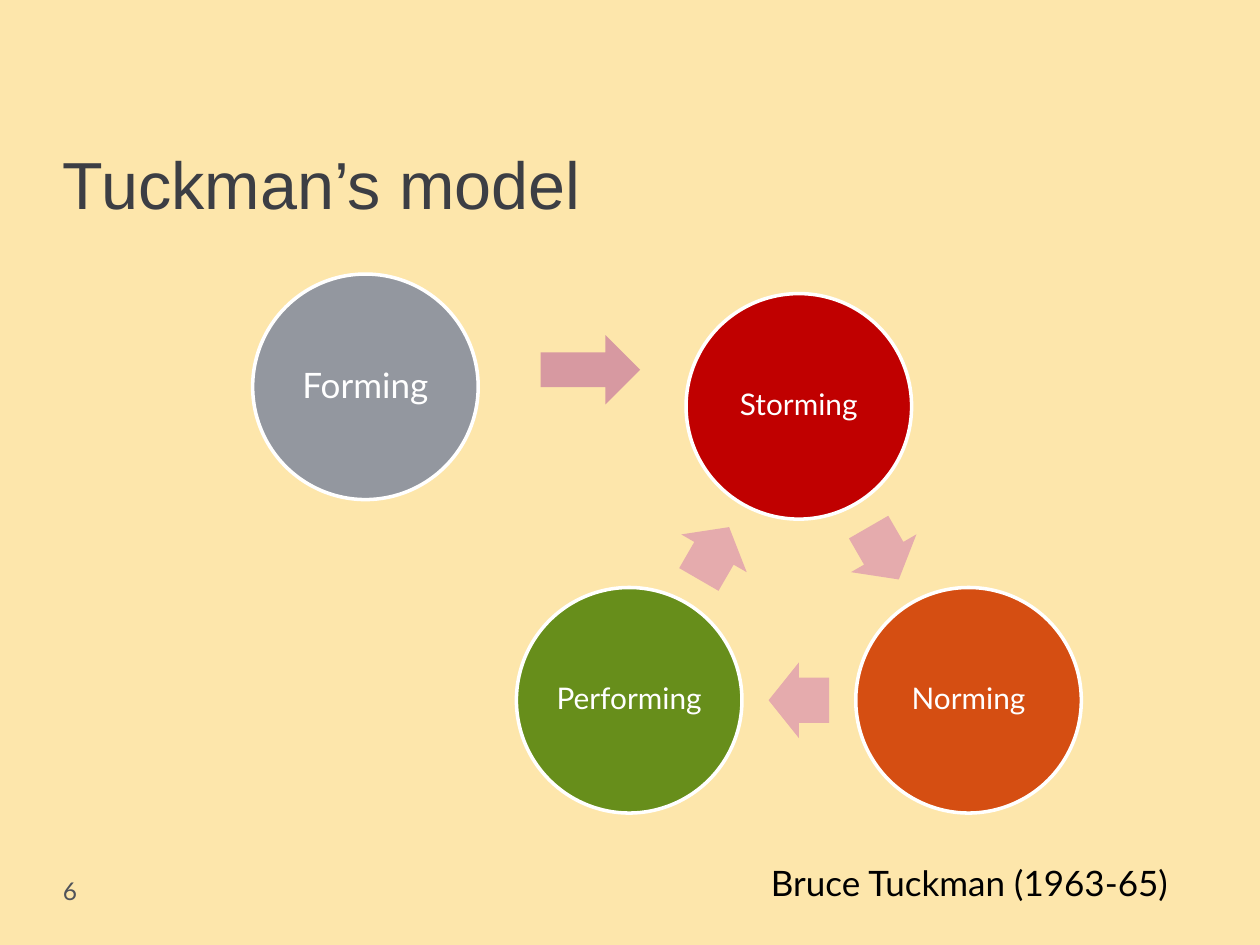
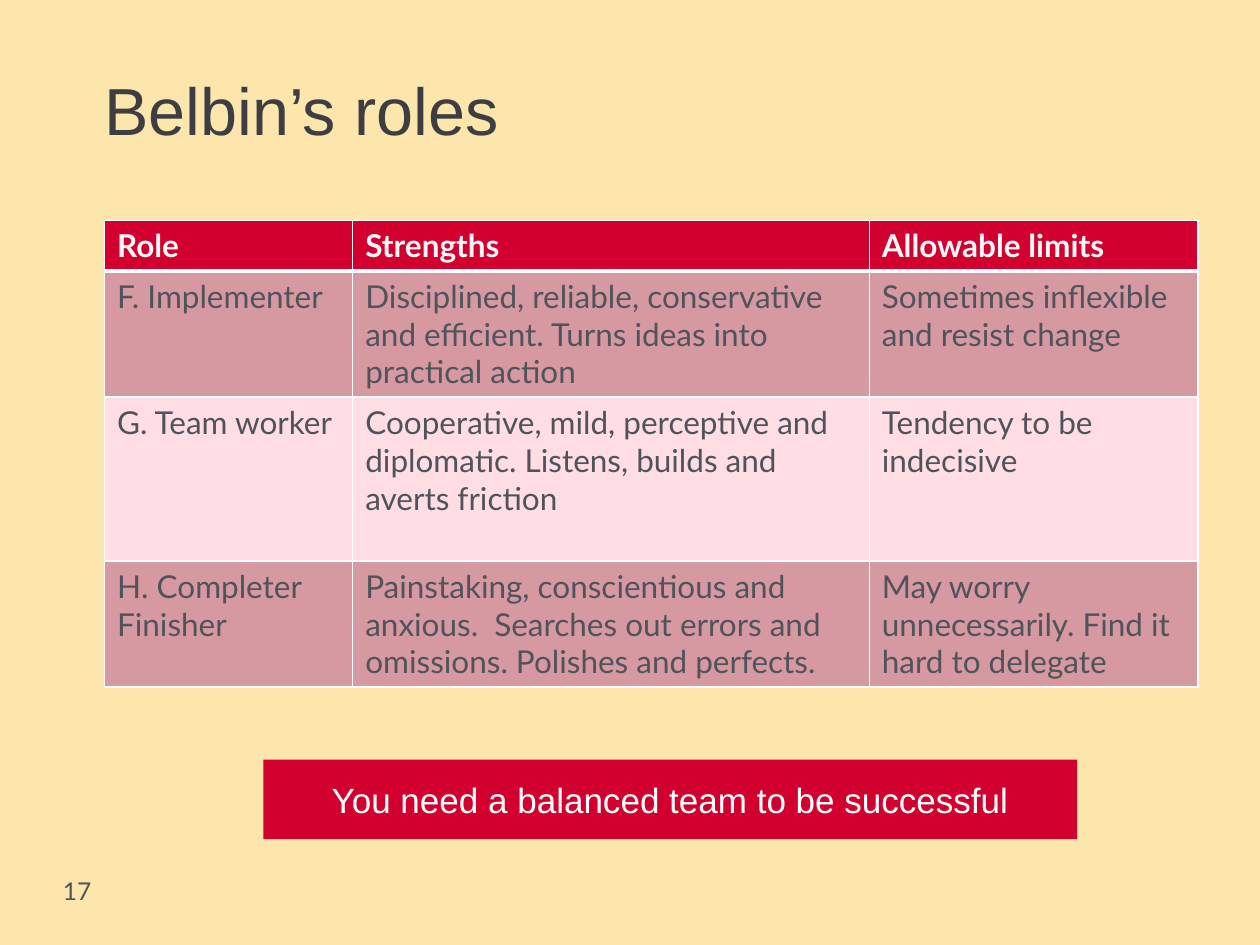
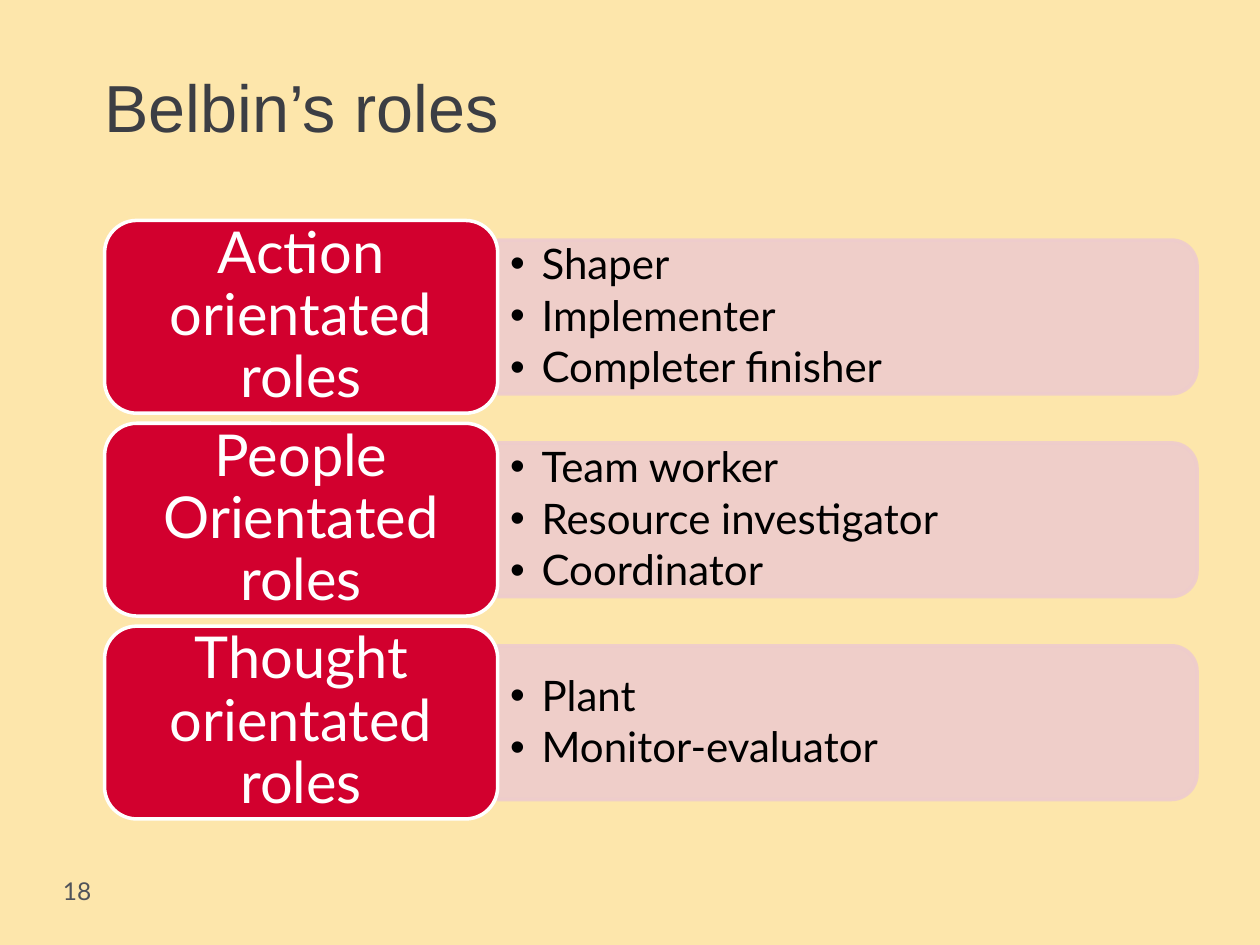
from math import cos, radians, sin

from lxml.etree import SubElement
from pptx import Presentation
from pptx.dml.color import RGBColor
from pptx.enum.shapes import MSO_SHAPE
from pptx.enum.text import MSO_ANCHOR, PP_ALIGN
from pptx.oxml.ns import qn
from pptx.util import Inches, Pt

CREAM = RGBColor(0xFD, 0xE6, 0xAB)
WHITE = RGBColor(0xFF, 0xFF, 0xFF)
BLACK = RGBColor(0x00, 0x00, 0x00)
INK = RGBColor(0x3C, 0x3E, 0x44)
GRAY = RGBColor(0x50, 0x53, 0x5A)
STEEL = RGBColor(0x93, 0x97, 0x9F)
PAPER = RGBColor(0xF8, 0xF8, 0xF8)
RED = RGBColor(0xD2, 0x00, 0x2E)
CRIMSON = RGBColor(0xC0, 0x00, 0x00)
ORANGE = RGBColor(0xD5, 0x4E, 0x12)
GREEN = RGBColor(0x67, 0x8E, 0x1B)
ROSE = RGBColor(0xD7, 0x99, 0xA1)
PINK = RGBColor(0xE5, 0xAB, 0xAD)
BLUSH = RGBColor(0xFF, 0xDD, 0xE4)
PALE = RGBColor(0xEE, 0xCC, 0xCD)

SANS = "Arial"
BODY = "Lato"

ROLES = [
    ["Role", "Strengths", "Allowable limits"],
    ["F. Implementer",
     "Disciplined, reliable, conservative and efficient. Turns ideas into practical action",
     "Sometimes inflexible and resist change"],
    ["G. Team worker",
     "Cooperative, mild, perceptive and diplomatic. Listens, builds and averts friction",
     "Tendency to be indecisive"],
    ["H. Completer Finisher",
     "Painstaking, conscientious and anxious.  Searches out errors and omissions. "
     "Polishes and perfects.",
     "May worry unnecessarily. Find it hard to delegate"],
]
GROUPS = [
    ("Action orientated roles", ["Shaper", "Implementer", "Completer finisher"]),
    ("People Orientated roles", ["Team worker", "Resource investigator", "Coordinator"]),
    ("Thought orientated roles", ["Plant", "Monitor-evaluator"]),
]
STAGES = [("Storming", CRIMSON), ("Norming", ORANGE), ("Performing", GREEN)]


def add_run(par, text, size, color, font=BODY, bold=False):
    run = par.add_run()
    run.text = text
    run.font.name = font
    run.font.size = Pt(size)
    run.font.bold = bold
    run.font.color.rgb = color


def set_frame(frame, anchor, pad_x=0.1, pad_y=0.05):
    frame.word_wrap = True
    frame.vertical_anchor = anchor
    frame.margin_left = frame.margin_right = Inches(pad_x)
    frame.margin_top = frame.margin_bottom = Inches(pad_y)


def add_box(slide, box, anchor=MSO_ANCHOR.TOP, pad_x=0.1, pad_y=0.05):
    frame = slide.shapes.add_textbox(*map(Inches, box)).text_frame
    set_frame(frame, anchor, pad_x, pad_y)
    return frame


def add_form(slide, kind, box, fill, line=None, turn=0):
    shape = slide.shapes.add_shape(kind, *map(Inches, box))
    shape.shadow.inherit = False
    shape.fill.solid()
    shape.fill.fore_color.rgb = fill
    if line is None:
        shape.line.fill.background()
    else:
        shape.line.color.rgb = line
        shape.line.width = Pt(2)
    shape.rotation = turn
    return shape


def add_label(shape, text, size, font=BODY, pad_x=0.02, pad_y=0.02, gap=0.9):
    set_frame(shape.text_frame, MSO_ANCHOR.MIDDLE, pad_x, pad_y)
    par = shape.text_frame.paragraphs[0]
    par.alignment = PP_ALIGN.CENTER
    par.line_spacing = gap
    add_run(par, text, size, WHITE, font)


def add_slide(deck, title, left, top, number):
    slide = deck.slides.add_slide(deck.slide_layouts[6])
    head = add_box(slide, (left, top, 9.06, 0.91), MSO_ANCHOR.BOTTOM, 0, 0)
    add_run(head.paragraphs[0], title, 38, INK, SANS)
    foot = add_box(slide, (0.5, 6.95, 2.33, 0.4), pad_x=0, pad_y=0)
    add_run(foot.paragraphs[0], number, 14, GRAY)
    return slide


def add_disc(slide, x, y, text, size, fill):
    side = 1.79
    box = (x - side / 2, y - side / 2, side, side)
    add_label(add_form(slide, MSO_SHAPE.OVAL, box, fill, WHITE), text, size)


def add_cycle(slide, x, y, reach):
    for i, (name, fill) in enumerate(STAGES):
        spot = radians(120 * i - 90)
        add_disc(slide, x + reach * cos(spot), y + reach * sin(spot), name, 17, fill)
        mid = radians(120 * i - 30)
        box = (x + reach / 2 * cos(mid) - 0.24, y + reach / 2 * sin(mid) - 0.3, 0.48, 0.6)
        arrow = add_form(slide, MSO_SHAPE.RIGHT_ARROW, box, PINK, turn=60 + 120 * i)
        arrow.adjustments[0] = 0.6


def set_edge(cell, side, width):
    props = cell._tc.get_or_add_tcPr()
    edge = SubElement(props, qn("a:ln" + side), w=str(Pt(width)))
    SubElement(SubElement(edge, qn("a:solidFill")), qn("a:srgbClr"), val=str(WHITE))


def add_grid(slide, box, rows, widths, heights):
    grid = slide.shapes.add_table(len(rows), len(widths), *map(Inches, box)).table
    grid.horz_banding = False
    for col, width in zip(grid.columns, widths):
        col.width = Inches(width)
    for r, texts in enumerate(rows):
        grid.rows[r].height = Inches(heights[r])
        for c, text in enumerate(texts):
            cell = grid.cell(r, c)
            for side in "LRTB":
                thick = (r, side) in ((0, "B"), (1, "T"))
                set_edge(cell, side, 3 if thick else 1)
            cell.fill.solid()
            cell.fill.fore_color.rgb = RED if r == 0 else ROSE if r % 2 else BLUSH
            add_run(cell.text_frame.paragraphs[0], text, 18,
                    PAPER if r == 0 else GRAY, bold=r == 0)


def fade(shape, share):
    for tint in shape.element.spPr.iter(qn("a:srgbClr")):
        SubElement(tint, qn("a:alpha"), val=str(share * 1000))


def add_bullet(par, text):
    par.line_spacing = 0.9
    par.space_after = Pt(3.6)
    props = par._p.get_or_add_pPr()
    props.set("marL", str(Inches(0.25)))
    props.set("indent", str(-Inches(0.25)))
    SubElement(props, qn("a:buFont"), typeface=SANS)
    SubElement(props, qn("a:buChar"), char="•")
    add_run(par, text, 24, BLACK)


def add_group(slide, top, name, items):
    left, width, height = 0.83, 3.12, 1.53
    depth, span = 1.22, 5.55
    edge, mid = left + width, top + height / 2
    box = (edge + span / 2 - depth / 2, mid - span / 2, depth, span)
    panel = add_form(slide, MSO_SHAPE.ROUND_2_SAME_RECTANGLE, box, PALE, PALE, 90)
    fade(panel, 90)
    frame = add_box(slide, (edge, mid - 0.55, 5.49, 1.11), MSO_ANCHOR.MIDDLE)
    for i, item in enumerate(items):
        add_bullet(frame.add_paragraph() if i else frame.paragraphs[0], item)
    card = add_form(slide, MSO_SHAPE.ROUNDED_RECTANGLE, (left, top, width, height), RED, WHITE)
    add_label(card, name, 33, pad_x=0.14, pad_y=0.07)


def main():
    deck = Presentation()
    deck.slide_width, deck.slide_height = Inches(10), Inches(7.5)
    back = deck.slide_master.background.fill
    back.solid()
    back.fore_color.rgb = CREAM

    model = add_slide(deck, "Tuckman’s model", 0.5, 0.86, "6")
    add_cycle(model, 6.34, 4.78, 1.555)
    add_disc(model, 2.9, 3.07, "Forming", 20, STEEL)
    add_form(model, MSO_SHAPE.RIGHT_ARROW, (4.29, 2.66, 0.79, 0.55), ROSE)
    credit = add_box(model, (6.02, 6.79, 3.78, 0.44))
    add_run(credit.paragraphs[0], "Bruce Tuckman (1963-65)", 20, BLACK)

    roles = add_slide(deck, "Belbin’s roles", 0.83, 0.27, "17")
    add_grid(roles, (0.83, 1.75, 8.67, 3.7), ROLES, (1.97, 4.1, 2.61), (0.4, 1, 1.3, 1))
    banner = add_form(roles, MSO_SHAPE.RECTANGLE, (2.09, 6.03, 6.46, 0.63), RED)
    add_label(banner, "You need a balanced team to be successful", 20, SANS, 0.1, 0.05, 1.0)

    kinds = add_slide(deck, "Belbin’s roles", 0.83, 0.25, "18")
    for i, (name, items) in enumerate(GROUPS):
        add_group(kinds, 1.75 + 1.61 * i, name, items)

    deck.save("out.pptx")


if __name__ == "__main__":
    main()
